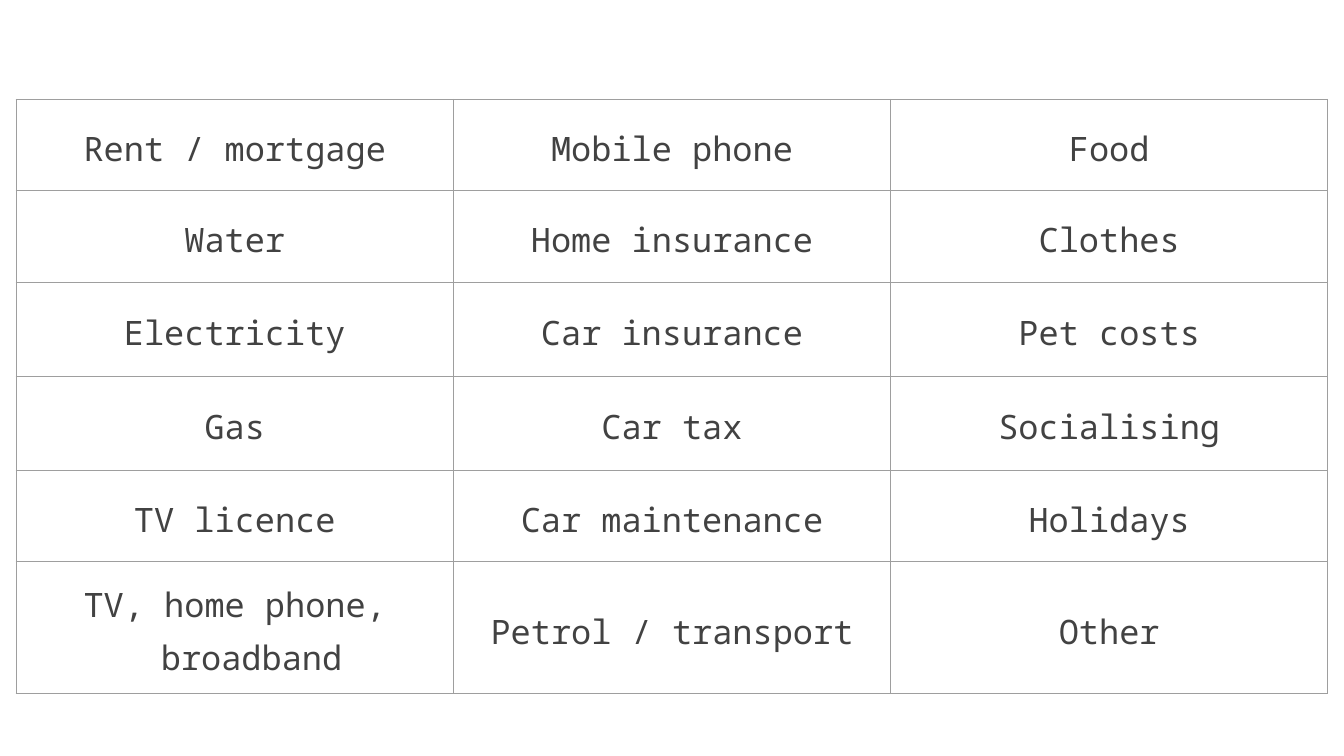
from lxml import etree
from pptx import Presentation
from pptx import util as u
from pptx.dml.color import RGBColor
from pptx.enum import text
from pptx.oxml.ns import qn

INK = RGBColor(0x42, 0x42, 0x42)
RULE = RGBColor(0x9E, 0x9E, 0x9E)
FONT = "Noto Sans Mono"

SLIDE_WIDTH = 10
TABLE_WIDTH = 9.76
ROW_HEIGHTS = [0.68, 0.68, 0.7, 0.7, 0.68, 0.7]
EXPENSES = [
    ["Rent / mortgage", "Mobile phone", "Food"],
    ["Water", "Home insurance", "Clothes"],
    ["Electricity", "Car insurance", "Pet costs"],
    ["Gas", "Car tax", "Socialising"],
    ["TV licence", "Car maintenance", "Holidays"],
    ["TV, home phone, broadband", "Petrol / transport", "Other"],
]


def add_borders(cell):
    """Rule all four sides; borders must come before the fill."""
    properties = cell._tc.get_or_add_tcPr()
    for position, side in enumerate(("lnL", "lnR", "lnT", "lnB")):
        border = etree.Element(qn(f"a:{side}"), w=str(u.Pt(0.75)))
        fill = etree.SubElement(border, qn("a:solidFill"))
        etree.SubElement(fill, qn("a:srgbClr"), val=str(RULE))
        properties.insert(position, border)


def fill_cell(cell, expense):
    cell.fill.background()
    add_borders(cell)
    cell.margin_left = cell.margin_right = u.Inches(0.07)
    cell.margin_top = cell.margin_bottom = u.Inches(0.1)
    cell.vertical_anchor = text.MSO_ANCHOR.MIDDLE
    cell.text = expense

    paragraph = cell.text_frame.paragraphs[0]
    paragraph.alignment = text.PP_ALIGN.CENTER
    paragraph.line_spacing = 1.15
    paragraph.font.name = FONT
    paragraph.font.size = u.Pt(18)
    paragraph.font.color.rgb = INK
    # Hanging indent
    indents = paragraph._p.get_or_add_pPr()
    indents.set("marL", str(u.Inches(0.25)))
    indents.set("indent", str(u.Inches(-0.25)))


def add_expense_table(slide):
    columns = len(EXPENSES[0])
    table = slide.shapes.add_table(
        len(EXPENSES), columns, u.Inches(0.12), u.Inches(0.74),
        u.Inches(TABLE_WIDTH), u.Inches(sum(ROW_HEIGHTS)),
    ).table
    table.first_row = table.horz_banding = False
    for column in table.columns:
        column.width = u.Inches(TABLE_WIDTH / columns)
    for row, height, expenses in zip(table.rows, ROW_HEIGHTS, EXPENSES):
        row.height = u.Inches(height)
        for cell, expense in zip(row.cells, expenses):
            fill_cell(cell, expense)


def main():
    presentation = Presentation()
    presentation.slide_width = u.Inches(SLIDE_WIDTH)
    presentation.slide_height = u.Inches(SLIDE_WIDTH * 9 / 16)
    slide = presentation.slides.add_slide(presentation.slide_layouts[6])

    # Household expenses
    add_expense_table(slide)

    presentation.save("out.pptx")


if __name__ == "__main__":
    main()
